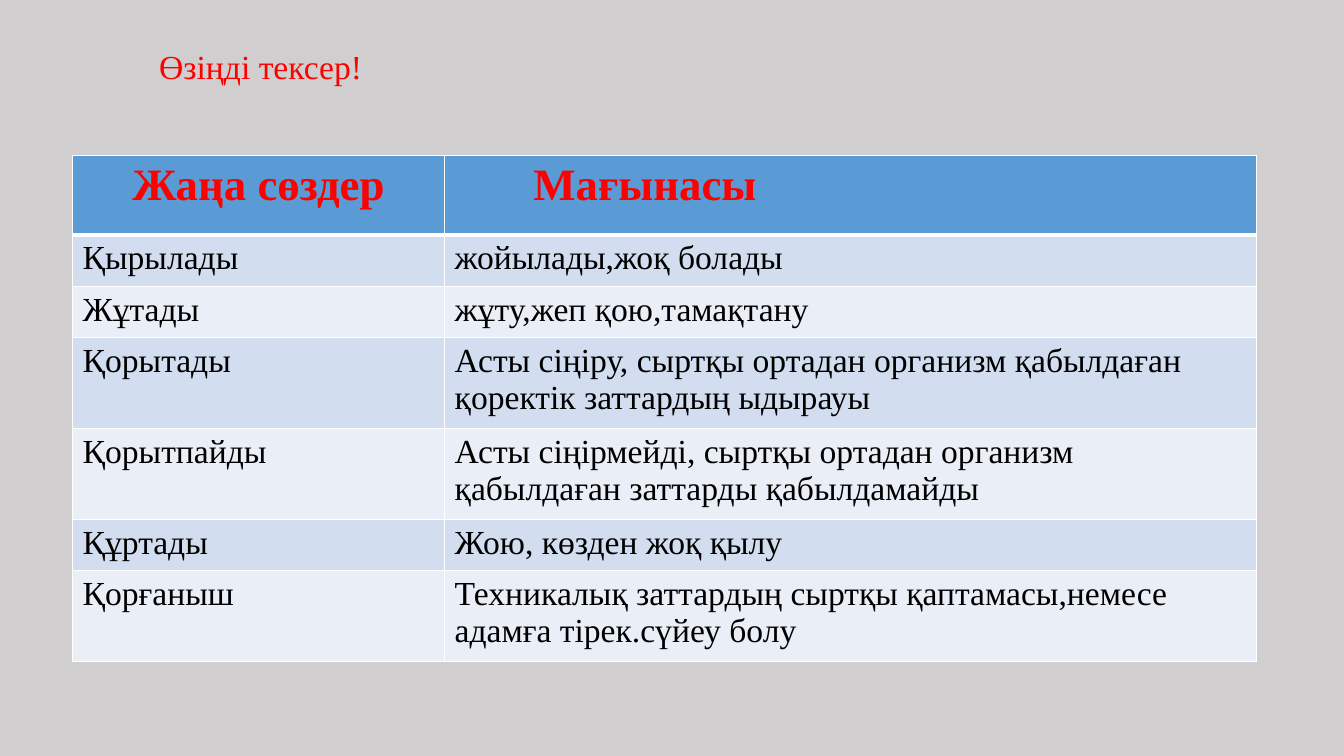
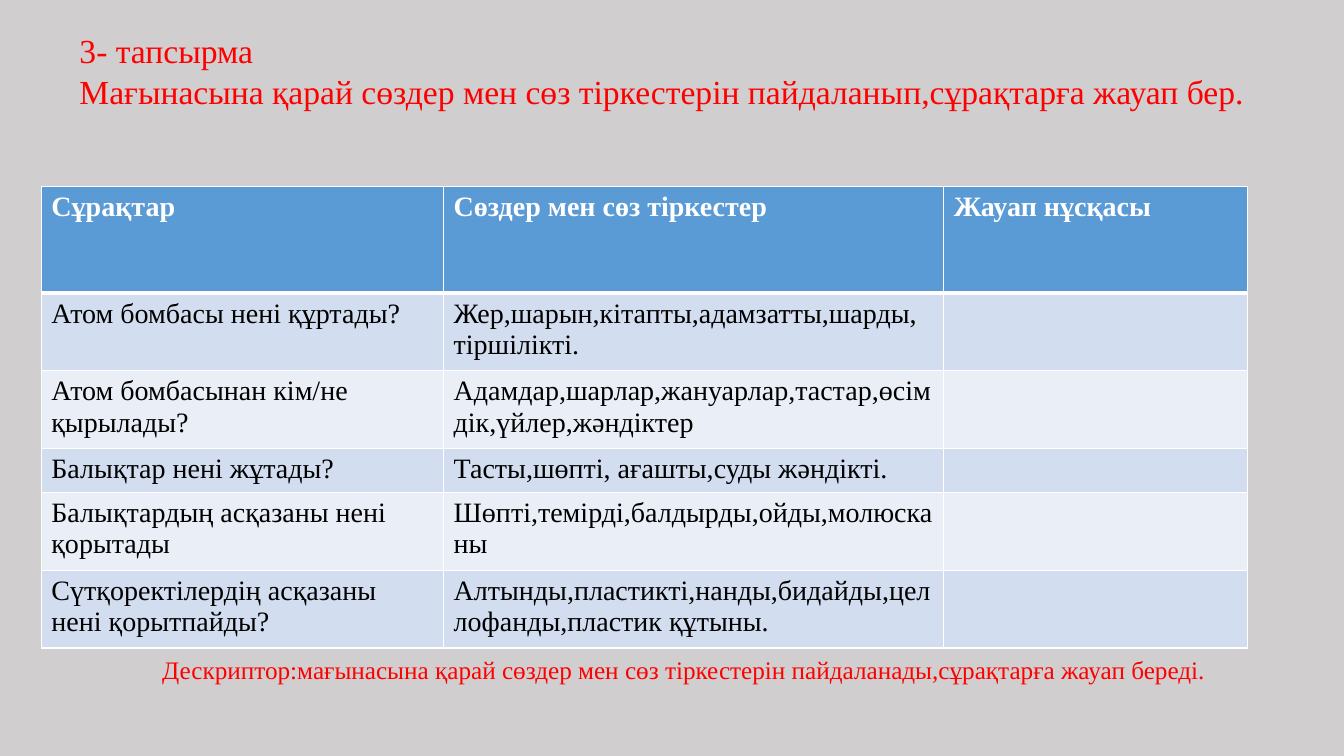
from lxml import etree
from pptx import Presentation
from pptx.dml.color import RGBColor
from pptx.enum.text import MSO_AUTO_SIZE as AutoSize, PP_ALIGN as Align
from pptx.oxml.ns import qn
from pptx.util import Inches, Pt

FONT = "Times New Roman"
RED, BLACK, WHITE = "FF0000", "000000", "FFFFFF"
HEADER_FILL = "5B9BD5"
BAND_FILLS = ["D2DEEF", "EAEFF7"]


def colour(code):
    return RGBColor.from_string(code)


def write(frame, text, size, code, bold=False):
    frame.text = text
    for para in frame.paragraphs:
        for span in para.runs:
            span.font.name = FONT
            span.font.size = Pt(size)
            span.font.bold = bold
            span.font.color.rgb = colour(code)


deck = Presentation()
deck.slide_width, deck.slide_height = Inches(13.33), Inches(7.5)
deck.slide_master.background.fill.solid()
deck.slide_master.background.fill.fore_color.rgb = colour("D0CECE")

slides = [
    {
        "texts": [((1.48, 0.41, 2.23, 0.5), "Өзіңді тексер!", 24, False)],
        "at": (0.72, 1.54),
        "columns": [3.69, 8.05],
        "heights": [0.79, 0.51, 0.51, 0.88, 0.88, 0.51, 0.88],
        "header": (32, RED),
        "body_size": 24,
        "rows": [
            ["Жаңа сөздер", "Мағынасы"],
            ["Қырылады", "жойылады,жоқ болады"],
            ["Жұтады", "жұту,жеп қою,тамақтану"],
            ["Қорытады", "Асты сіңіру, сыртқы ортадан организм қабылдаған қоректік заттардың ыдырауы"],
            ["Қорытпайды", "Асты сіңірмейді, сыртқы ортадан организм қабылдаған заттарды қабылдамайды"],
            ["Құртады", "Жою, көзден жоқ қылу"],
            ["Қорғаныш", "Техникалық заттардың сыртқы қаптамасы,немесе адамға тірек.сүйеу болу"],
        ],
    },
    {
        "texts": [
            ((0.69, 0.25, 11.87, 0.91),
             "3- тапсырма\nМағынасына қарай сөздер мен сөз тіркестерін пайдаланып,сұрақтарға жауап бер.",
             24, False),
            ((1.51, 6.44, 11.18, 0.4),
             "Дескриптор:мағынасына қарай сөздер мен сөз тіркестерін пайдаланады,сұрақтарға жауап береді.",
             18, True),
        ],
        "at": (0.41, 1.85),
        "columns": [3.99, 4.96, 3.01],
        "heights": [1.06, 0.77, 0.77, 0.44, 0.77, 0.77],
        "header": (20, WHITE),
        "body_size": 20,
        "rows": [
            ["Сұрақтар", "Сөздер мен сөз тіркестер", "Жауап нұсқасы"],
            ["Атом бомбасы нені құртады?", "Жер,шарын,кітапты,адамзатты,шарды,\nтіршілікті.", ""],
            ["Атом бомбасынан кім/не қырылады?", "Адамдар,шарлар,жануарлар,тастар,өсімдік,үйлер,жәндіктер", ""],
            ["Балықтар нені жұтады?", "Тасты,шөпті, ағашты,суды жәндікті.", ""],
            ["Балықтардың асқазаны нені қорытады", "Шөпті,темірді,балдырды,ойды,молюсканы", ""],
            ["Сүтқоректілердің асқазаны нені қорытпайды?", "Алтынды,пластикті,нанды,бидайды,целлофанды,пластик құтыны.", ""],
        ],
    },
]

tables = []
for content in slides:
    page = deck.slides.add_slide(deck.slide_layouts[6])

    for place, text, size, wrap in content["texts"]:
        box = page.shapes.add_textbox(*map(Inches, place))
        box.text_frame.word_wrap = wrap
        box.text_frame.auto_size = AutoSize.SHAPE_TO_FIT_TEXT
        write(box.text_frame, text, size, RED)

    rows, columns, heights = content["rows"], content["columns"], content["heights"]
    area = (*content["at"], sum(columns), sum(heights))
    table = page.shapes.add_table(len(rows), len(columns), *map(Inches, area)).table
    tables.append(table)
    for column, width in zip(table.columns, columns):
        column.width = Inches(width)
    for row, height in zip(table.rows, heights):
        row.height = Inches(height)

    for row_index, row in enumerate(rows):
        is_header = row_index == 0
        size, code = content["header"] if is_header else (content["body_size"], BLACK)
        for column_index, text in enumerate(row):
            cell = table.cell(row_index, column_index)
            write(cell.text_frame, text, size, code, is_header)
            properties = cell._tc.get_or_add_tcPr()
            for side in ("lnL", "lnR", "lnT", "lnB"):
                thick = (is_header and side == "lnB") or (row_index == 1 and side == "lnT")
                line = etree.SubElement(properties, qn(f"a:{side}"), w=str(Pt(3 if thick else 1)))
                fill = etree.SubElement(line, qn("a:solidFill"))
                etree.SubElement(fill, qn("a:srgbClr"), val=WHITE)
            cell.fill.solid()
            cell.fill.fore_color.rgb = colour(HEADER_FILL if is_header else BAND_FILLS[(row_index - 1) % 2])

words_header, meaning_header = tables[0].rows[0].cells
words_header.text_frame.paragraphs[0].alignment = Align.CENTER
meaning_header.margin_left = Inches(0.88)

deck.save("out.pptx")
